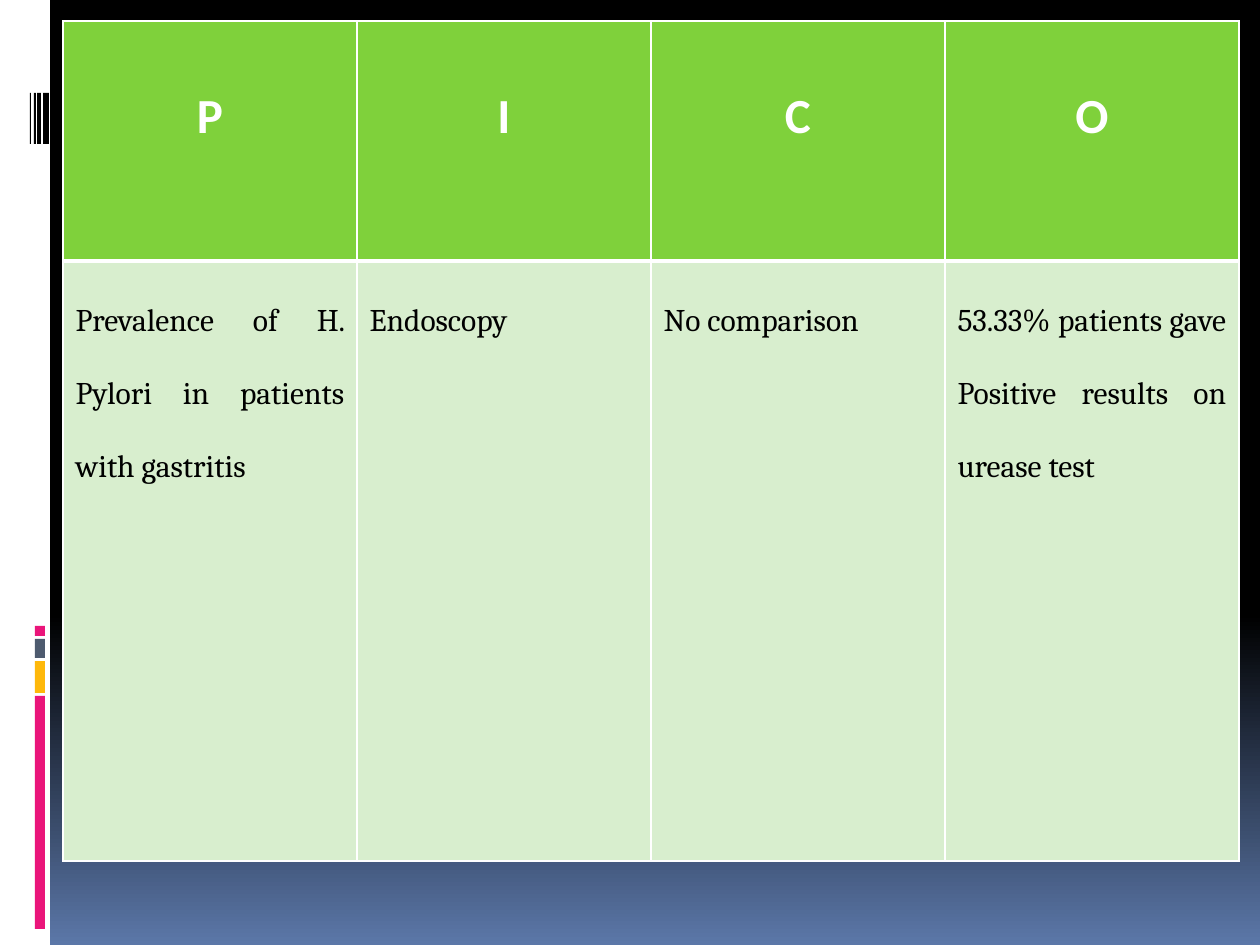
from lxml import etree
from pptx import Presentation
from pptx import util as u
from pptx.dml.color import RGBColor
from pptx.enum import shapes, text
from pptx.oxml.ns import qn

WHITE = RGBColor(0xFF, 0xFF, 0xFF)
BLACK = RGBColor(0, 0, 0)
BLUE = RGBColor(0x5B, 0x77, 0xA8)
PINK = RGBColor(0xEA, 0x15, 0x7A)
AMBER = RGBColor(0xFE, 0xB8, 0x0A)
SLATE = RGBColor(0x4E, 0x5B, 0x6F)
GREEN = RGBColor(0x7F, 0xD1, 0x3B)
PALE = RGBColor(0xD8, 0xEE, 0xCE)

PICO = [
    ("P", "Prevalence of H. Pylori in patients with gastritis"),
    ("I", "Endoscopy"),
    ("C", "No comparison"),
    ("O", "53.33% patients gave Positive results on urease test"),
]
SIDE_BARS = [(696, 233, PINK), (661, 32, AMBER), (639, 19, SLATE), (626, 10, PINK)]
BARCODE = [(43, 6), (37, 4), (34, 2), (30, 1)]

W, H = 1260, 945
SIDE_W = 50
TABLE_X, TABLE_Y = 63, 21
COL_W, ROW_HS = 294, (240, 600)
HEAD_TOP, BODY_TOP = 66, 6


def px(n):
    return u.Emu(round(n * 914400 / 126))


def add_bar(s, x, y, w, h, color):
    sp = s.shapes.add_shape(shapes.MSO_SHAPE.RECTANGLE, px(x), px(y), px(w), px(h))
    sp.shadow.inherit = False
    sp.fill.solid()
    sp.fill.fore_color.rgb = color
    sp.line.fill.background()


def write(tf, words, font, size, color, bold=False, align=None, spacing=None):
    p = tf.paragraphs[0]
    p.alignment = align
    p.line_spacing = spacing
    r = p.add_run()
    r.text = words
    r.font.name = font
    r.font.size = u.Pt(size)
    r.font.bold = bold
    r.font.color.rgb = color


def set_borders(cell, **widths):
    tc_pr = cell._tc.get_or_add_tcPr()
    for side in "LRTB":
        ln = etree.SubElement(tc_pr, qn("a:ln" + side), w=str(u.Pt(widths.get(side, 1))))
        fill = etree.SubElement(ln, qn("a:solidFill"))
        etree.SubElement(fill, qn("a:srgbClr"), val=str(WHITE))


def style_cell(cell, color, top, **widths):
    set_borders(cell, **widths)
    cell.fill.solid()
    cell.fill.fore_color.rgb = color
    cell.margin_top = px(top)


prs = Presentation()
prs.slide_width, prs.slide_height = px(W), px(H)
s = prs.slides.add_slide(prs.slide_layouts[6])

bg = s.background.fill
bg.gradient()
bg.gradient_angle = 270
for stop, position, color in zip(bg.gradient_stops, (0.65, 1), (BLACK, BLUE)):
    stop.position = position
    stop.color.rgb = color

add_bar(s, 0, 0, SIDE_W, H, WHITE)
for y, h, color in SIDE_BARS:
    add_bar(s, 35, y, 10, h, color)
for x, w in BARCODE:
    add_bar(s, x, 93, w, 51, BLACK)

table = s.shapes.add_table(
    len(ROW_HS), len(PICO), px(TABLE_X), px(TABLE_Y),
    px(COL_W * len(PICO)), px(sum(ROW_HS))).table
for row, h in zip(table.rows, ROW_HS):
    row.height = px(h)
for i, (letter, finding) in enumerate(PICO):
    table.columns[i].width = px(COL_W)
    head, body = table.cell(0, i), table.cell(1, i)
    style_cell(head, GREEN, HEAD_TOP, B=3)
    style_cell(body, PALE, BODY_TOP, T=3)
    write(head.text_frame, letter, "Calibri", 28, WHITE, bold=True,
          align=text.PP_ALIGN.CENTER)
    write(body.text_frame, finding, "Cambria", 18, BLACK,
          align=text.PP_ALIGN.JUSTIFY, spacing=2.0)

prs.save("out.pptx")
